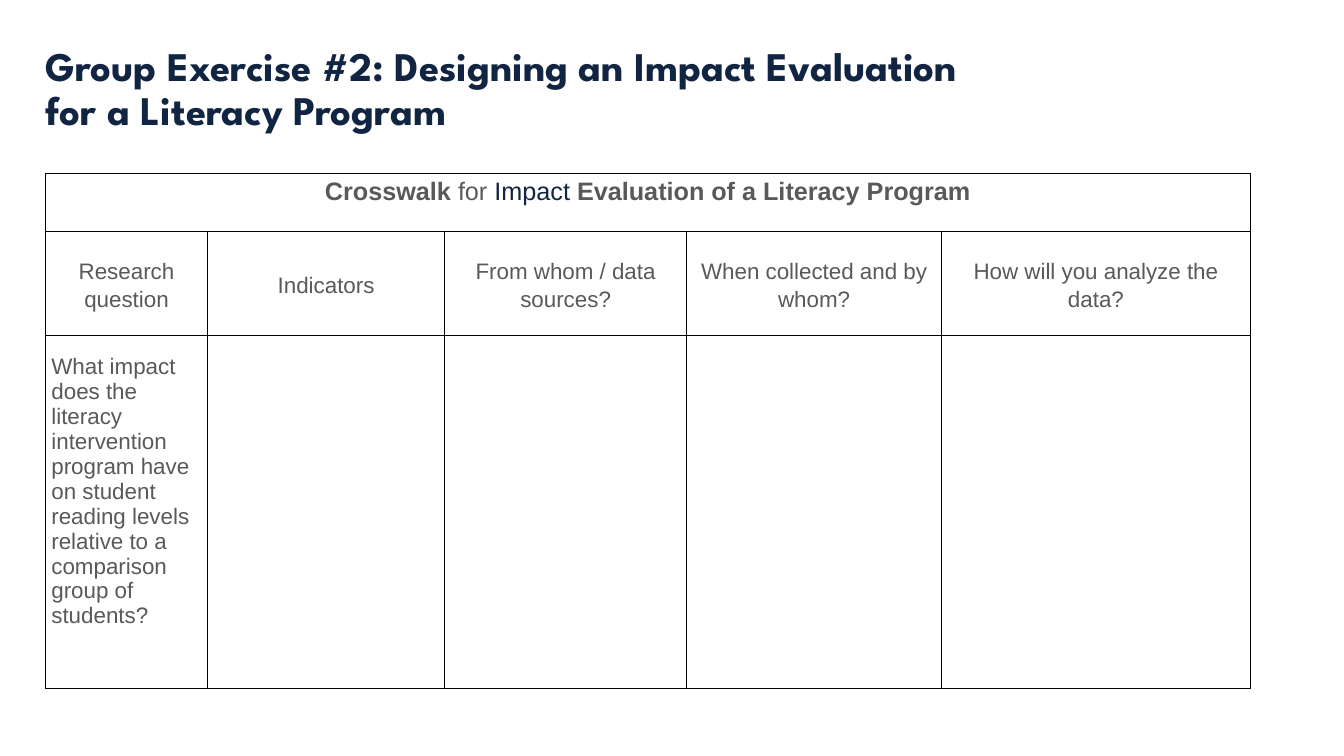
from dataclasses import dataclass

from lxml import etree
from pptx import Presentation
from pptx import util as u
from pptx.dml import color
from pptx.enum import text
from pptx.oxml import ns


@dataclass(frozen=True)
class Theme:
    navy: str = "112441"
    gray: str = "595959"
    border: str = "000000"
    title_font: str = "League Spartan"
    body_font: str = "Arial"
    title_size: int = 29
    heading_size: int = 18
    body_size: int = 16
    border_width: float = 1


THEME = Theme()


@dataclass(frozen=True)
class Run:
    text: str
    size: int = THEME.body_size
    color: str = THEME.gray
    bold: bool = False
    font: str = THEME.body_font


@dataclass(frozen=True)
class CellText:
    row: int
    column: int
    runs: tuple[Run, ...]
    alignment: text.PP_ALIGN = text.PP_ALIGN.CENTER
    anchor: text.MSO_ANCHOR = text.MSO_ANCHOR.MIDDLE
    line_spacing: float = 1.15
    top_margin: float = 0


TITLE = Run("Group Exercise #2: Designing an Impact Evaluation for a Literacy Program",
            THEME.title_size, THEME.navy, True, THEME.title_font)
COLUMN_WIDTHS = (1.61, 2.35, 2.4, 2.53, 3.06)
ROW_HEIGHTS = (0.58, 1.03, 3.5)
HEADERS = ("Research question", "Indicators", "From whom / data sources?",
           "When collected and by whom?", "How will you analyze the data?")
HEADING = CellText(0, 0, (
    Run("Crosswalk ", THEME.heading_size, bold=True),
    Run("for ", THEME.heading_size),
    Run("Impact ", THEME.heading_size, THEME.navy),
    Run("Evaluation of a Literacy Program", THEME.heading_size, bold=True),
), anchor=text.MSO_ANCHOR.TOP)
QUESTION = CellText(2, 0, (
    Run("What impact does the literacy intervention program have on student "
        "reading levels relative to a comparison group of students?"),
), text.PP_ALIGN.LEFT, text.MSO_ANCHOR.TOP, 1.0, 0.19)


def apply(target, values: dict) -> None:
    for name, value in values.items():
        setattr(target, name, value)


def add_run(paragraph, run: Run) -> None:
    piece = paragraph.add_run()
    piece.text = run.text
    apply(piece.font, {"name": run.font, "size": u.Pt(run.size), "bold": run.bold})
    piece.font.color.rgb = color.RGBColor.from_string(run.color)


def add_borders(cell) -> None:
    properties = cell._tc.get_or_add_tcPr()
    for index, side in enumerate(("lnL", "lnR", "lnT", "lnB")):
        line = etree.Element(ns.qn(f"a:{side}"), w=str(u.Pt(THEME.border_width)))
        fill = etree.SubElement(line, ns.qn("a:solidFill"))
        etree.SubElement(fill, ns.qn("a:srgbClr"), val=THEME.border)
        properties.insert(index, line)


def fill_cell(table, content: CellText) -> None:
    cell = table.cell(content.row, content.column)
    apply(cell, {"vertical_anchor": content.anchor,
                 "margin_top": u.Inches(content.top_margin)})
    paragraph = cell.text_frame.paragraphs[0]
    apply(paragraph, {"alignment": content.alignment,
                      "line_spacing": content.line_spacing})
    for run in content.runs:
        add_run(paragraph, run)


def add_title(slide) -> None:
    shape = slide.shapes.add_textbox(*map(u.Inches, (0.45, 0.35, 9.26, 0.98)))
    frame = shape.text_frame
    apply(frame, {"word_wrap": True, "vertical_anchor": text.MSO_ANCHOR.BOTTOM,
                  "margin_left": 0, "margin_right": 0,
                  "margin_top": 0, "margin_bottom": 0})
    paragraph = frame.paragraphs[0]
    paragraph.line_spacing = 0.9
    add_run(paragraph, TITLE)


def add_crosswalk(slide) -> None:
    shape = slide.shapes.add_table(
        len(ROW_HEIGHTS), len(COLUMN_WIDTHS), u.Inches(0.45), u.Inches(1.72),
        u.Inches(sum(COLUMN_WIDTHS)), u.Inches(sum(ROW_HEIGHTS)))
    table = shape.table
    apply(table, {"first_row": False, "horz_banding": False})
    for column, width in zip(table.columns, COLUMN_WIDTHS):
        column.width = u.Inches(width)
    for row, height in zip(table.rows, ROW_HEIGHTS):
        row.height = u.Inches(height)

    # Clear cells with thin borders
    for cell in table.iter_cells():
        apply(cell, {"margin_left": u.Inches(0.06), "margin_right": u.Inches(0.06),
                     "margin_top": 0, "margin_bottom": 0})
        cell.fill.background()
        add_borders(cell)
    table.cell(0, 0).merge(table.cell(0, len(COLUMN_WIDTHS) - 1))

    # Heading, column headers and research question
    headers = [CellText(1, column, (Run(label),)) for column, label in enumerate(HEADERS)]
    for content in (HEADING, *headers, QUESTION):
        fill_cell(table, content)


def main() -> None:
    presentation = Presentation()
    apply(presentation, {"slide_width": u.Inches(13.33), "slide_height": u.Inches(7.5)})
    slide = presentation.slides.add_slide(presentation.slide_layouts[6])
    add_title(slide)
    add_crosswalk(slide)
    presentation.save("out.pptx")


if __name__ == "__main__":
    main()
